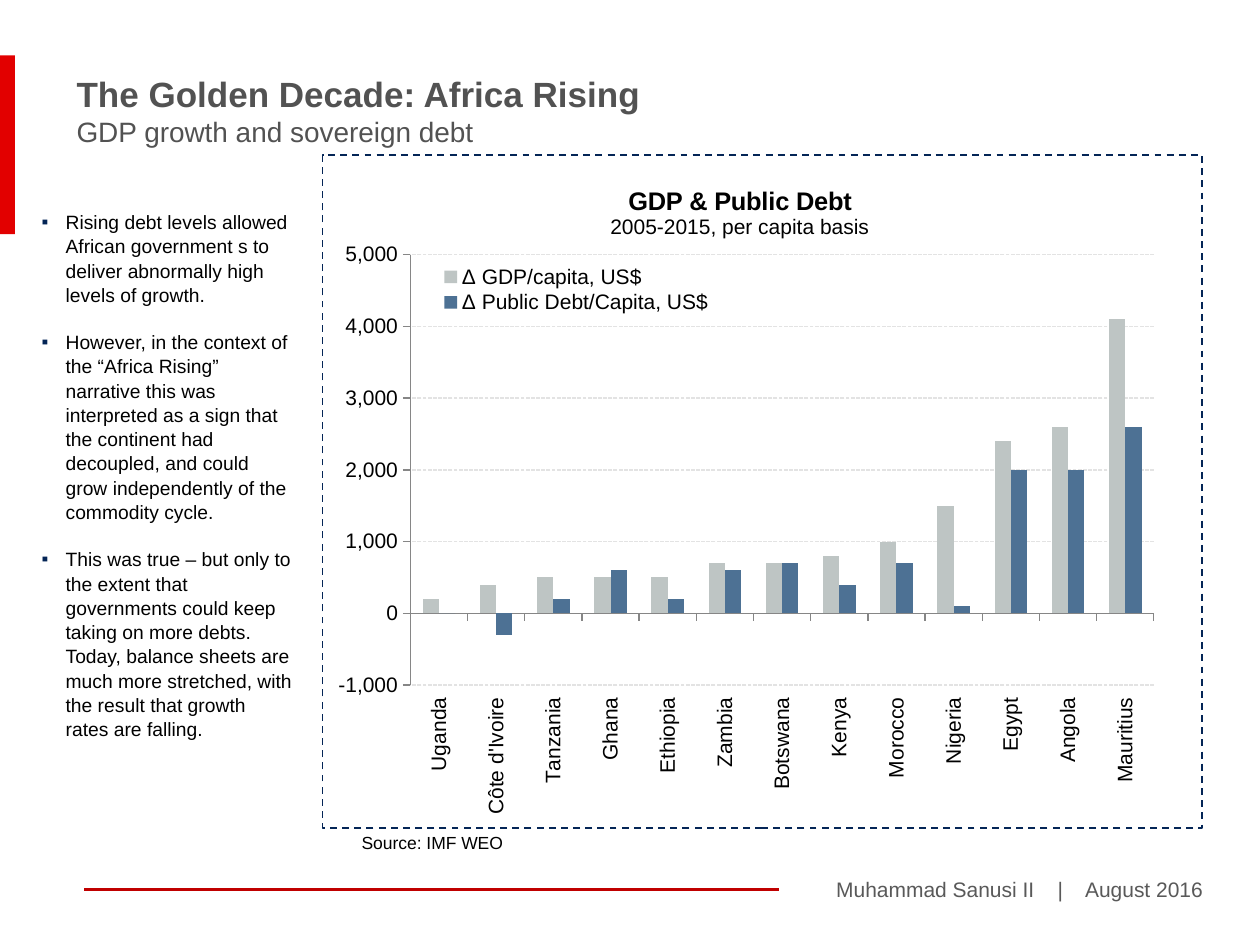
from lxml import etree
from pptx import Presentation
from pptx.chart.data import CategoryChartData
from pptx.dml.color import RGBColor
from pptx.enum import chart as ch, dml, shapes, text
from pptx.oxml import parse_xml
from pptx.oxml.ns import nsdecls, qn
from pptx.util import Pt

COLORS = {"red": "E20000", "rule": "C00000", "heading": "525252", "footer": "595959",
          "navy": "042556", "black": "000000", "gdp": "BEC5C4", "debt": "4D7194",
          "axis": "868686", "grid": "E3E3E3"}
FONT = "Arial"

HEADING = [("The Golden Decade: Africa Rising", 20, True),
           ("GDP growth and sovereign debt", 16, False)]
POINTS = [
    "Rising debt levels allowed African government s to deliver abnormally high levels of growth.",
    "However, in the context of the “Africa Rising” narrative this was interpreted as a sign that "
    "the continent had decoupled, and could grow independently of the commodity cycle.",
    "This was true – but only to the extent that governments could keep taking on more debts. "
    "Today, balance sheets are much more stretched, with the result that growth rates are falling.",
]
SOURCE = [("Source: IMF WEO", 10, False)]
FOOTER = [("Muhammad Sanusi II    |    August 2016", 12, False)]
CHART_TITLE = [("GDP & Public Debt", 14.5, True), ("2005-2015, per capita basis", 12, False)]
COUNTRIES = ["Uganda", "Côte d'Ivoire", "Tanzania", "Ghana", "Ethiopia", "Zambia", "Botswana",
             "Kenya", "Morocco", "Nigeria", "Egypt", "Angola", "Mauritius"]
SERIES = [
    ("Δ GDP/capita, US$", "gdp",
     [200, 400, 500, 500, 500, 700, 700, 800, 1000, 1500, 2400, 2600, 4100]),
    ("Δ Public Debt/Capita, US$", "debt",
     [0, -300, 200, 600, 200, 600, 700, 400, 700, 100, 2000, 2000, 2600]),
]
PANEL = (184.3, 88.6, 502.6, 384.5)
CHART = (184.3, 88.6, 491.8, 384.5)


def rgb(name):
    return RGBColor.from_string(COLORS[name])


def style_font(font, size, color, bold=False):
    for key, value in {"name": FONT, "size": Pt(size), "bold": bold}.items():
        setattr(font, key, value)
    font.color.rgb = rgb(color)


def fill_lines(frame, lines, color, align=text.PP_ALIGN.LEFT):
    for i, (words, size, bold) in enumerate(lines):
        para = frame.paragraphs[0] if i == 0 else frame.add_paragraph()
        para.alignment = align
        run = para.add_run()
        run.text = words
        style_font(run.font, size, color, bold)


def add_text(slide, box, lines, color, insets=(7.2, 3.6, 7.2, 3.6),
             align=text.PP_ALIGN.LEFT, anchor=text.MSO_ANCHOR.TOP):
    frame = slide.shapes.add_textbox(*map(Pt, box)).text_frame
    frame.word_wrap = True
    frame.vertical_anchor = anchor
    for side, inset in zip(("left", "top", "right", "bottom"), insets):
        setattr(frame, f"margin_{side}", Pt(inset))
    fill_lines(frame, lines, color, align)
    return frame


def add_bullets(frame):
    for i, para in enumerate(frame.paragraphs):
        para.line_spacing = 1.05
        para.space_before = Pt(13.2 if i else 0)
        props = para._p.get_or_add_pPr()
        props.set("marL", str(Pt(13.7)))
        props.set("indent", str(-Pt(13.7)))
        color = etree.SubElement(props, qn("a:buClr"))
        etree.SubElement(color, qn("a:srgbClr"), val=COLORS["navy"])
        etree.SubElement(props, qn("a:buFont"), typeface=FONT)
        etree.SubElement(props, qn("a:buChar"), char="▪")


def add_rect(slide, box):
    rect = slide.shapes.add_shape(shapes.MSO_SHAPE.RECTANGLE, *map(Pt, box))
    rect.shadow.inherit = False
    return rect


def manual_layout(inner=False, **fractions):
    """Chart layout element; x, y, w and h are fractions of the chart."""
    target = '<c:layoutTarget val="inner"/>' if inner else ""
    modes = "".join(f'<c:{k}Mode val="edge"/>' for k in "xy")
    values = "".join(f'<c:{k} val="{v}"/>' for k, v in fractions.items())
    return parse_xml(f'<c:layout {nsdecls("c")}><c:manualLayout>{target}{modes}{values}'
                     '</c:manualLayout></c:layout>')


def place(element, layout, after=None):
    for old in element.findall(qn("c:layout")):
        element.remove(old)
    if after is None:
        element.insert(0, layout)
    else:
        element.find(qn(after)).addnext(layout)


def add_debt_chart(slide):
    data = CategoryChartData(number_format="#,##0")
    data.categories = COUNTRIES
    for name, _, values in SERIES:
        data.add_series(name, values)
    chart = slide.shapes.add_chart(ch.XL_CHART_TYPE.COLUMN_CLUSTERED,
                                   *map(Pt, CHART), data).chart
    style_font(chart.font, 10, "black")

    fill_lines(chart.chart_title.text_frame, CHART_TITLE, "black", text.PP_ALIGN.CENTER)
    chart.chart_title.include_in_layout = False
    place(chart.chart_title._element, manual_layout(x=0.33, y=0.04), "c:tx")

    plot = chart.plots[0]
    plot.vary_by_categories = False
    plot.gap_width, plot.overlap = 150, 0
    for series, (_, color, _) in zip(plot.series, SERIES):
        series.invert_if_negative = False
        series.format.fill.solid()
        series.format.fill.fore_color.rgb = rgb(color)
    place(chart._chartSpace.chart.plotArea,
          manual_layout(inner=True, x=0.102, y=0.148, w=0.864, h=0.64))

    countries, dollars = chart.category_axis, chart.value_axis
    for axis in (countries, dollars):
        style_font(axis.tick_labels.font, 12, "black")
        axis.major_tick_mark = ch.XL_TICK_MARK.OUTSIDE
        axis.format.line.color.rgb = rgb("axis")
        axis.format.line.width = Pt(0.75)
    countries.tick_label_position = ch.XL_TICK_LABEL_POSITION.LOW
    label_body = countries._element.find(f"{qn('c:txPr')}/{qn('a:bodyPr')}")
    label_body.set("rot", "-5400000")
    label_body.set("vert", "horz")
    for key, value in {"minimum_scale": -1000, "maximum_scale": 5000, "major_unit": 1000}.items():
        setattr(dollars, key, value)
    dollars.tick_labels.number_format = "#,##0"
    dollars.tick_labels.number_format_is_linked = False
    grid = dollars.major_gridlines.format.line
    grid.color.rgb = rgb("grid")
    grid.width = Pt(0.75)
    grid.dash_style = dml.MSO_LINE.SQUARE_DOT

    chart.has_legend = True
    chart.legend.position = ch.XL_LEGEND_POSITION.RIGHT
    chart.legend.include_in_layout = False
    style_font(chart.legend.font, 12, "black")
    place(chart.legend._element, manual_layout(x=0.13, y=0.16, w=0.33, h=0.08), "c:legendPos")


def main():
    deck = Presentation()
    deck.slide_width, deck.slide_height = Pt(720), Pt(540)
    slide = deck.slides.add_slide(deck.slide_layouts[6])

    add_text(slide, (405.4, 497.5, 289.4, 21.6), FOOTER, "footer", align=text.PP_ALIGN.RIGHT)
    rule = slide.shapes.add_connector(shapes.MSO_CONNECTOR.STRAIGHT,
                                      *map(Pt, (48.2, 508.3, 445, 508.3)))
    rule.line.color.rgb = rgb("rule")
    rule.line.width = Pt(1.5)
    etree.SubElement(rule._element.spPr, qn("a:effectLst"))

    tab = add_rect(slide, (0, 31.7, 8.6, 102.2))
    tab.fill.solid()
    tab.fill.fore_color.rgb = rgb("red")
    tab.line.fill.background()

    add_text(slide, (36.7, 37.4, 623.5, 51.1), HEADING, "heading",
             anchor=text.MSO_ANCHOR.MIDDLE)
    add_bullets(add_text(slide, (23.8, 119.5, 143.3, 331.9),
                         [(point, 11, False) for point in POINTS], "black", (0, 0, 0, 0)))
    add_debt_chart(slide)

    panel = add_rect(slide, PANEL)
    panel.fill.background()
    panel.line.color.rgb = rgb("navy")
    panel.line.width = Pt(1)
    panel.line.dash_style = dml.MSO_LINE.DASH

    add_text(slide, (201.6, 473, 222.5, 17.3), SOURCE, "black", (5, 2.2, 5, 2.9))
    deck.save("out.pptx")


if __name__ == "__main__":
    main()
